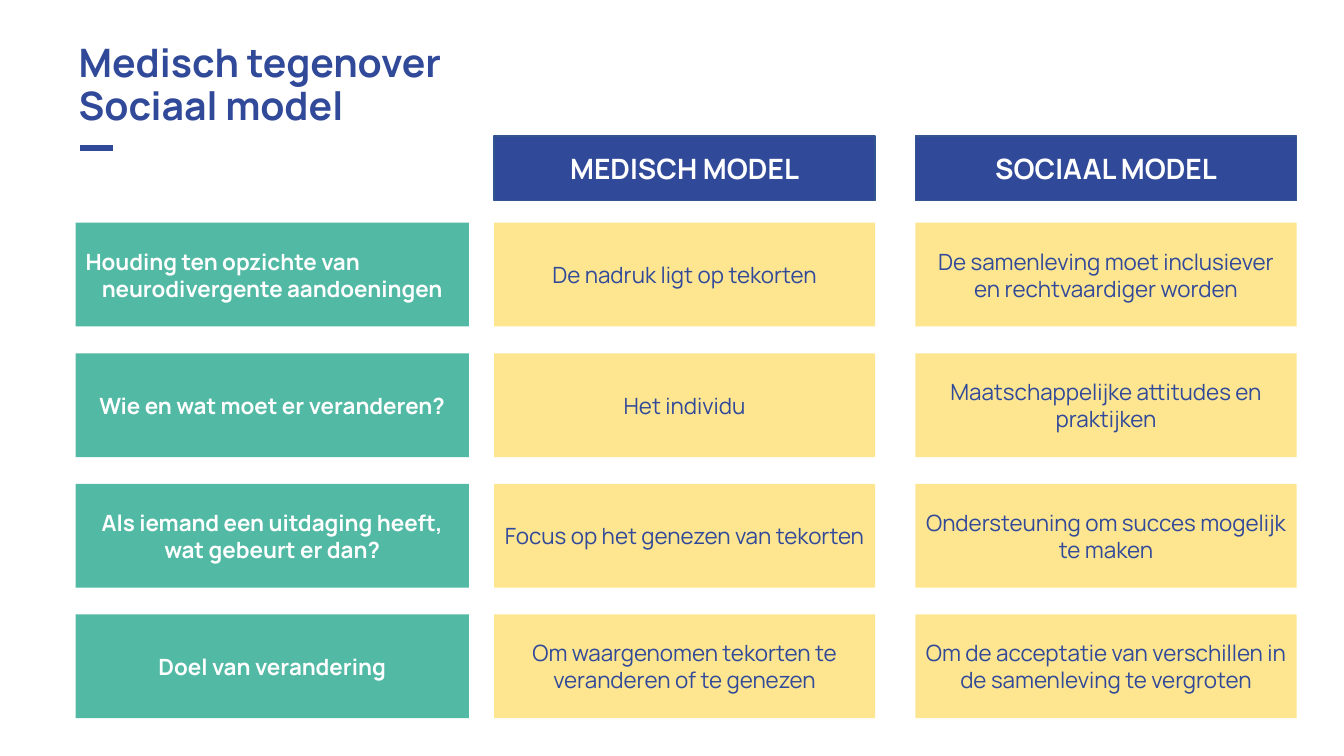
from lxml import etree
from pptx import Presentation
from pptx import util as u
from pptx.dml.color import RGBColor
from pptx.enum import shapes, text
from pptx.oxml.ns import qn

# Content
TITLE = "Medisch tegenover Sociaal model"
HEADS = ["MEDISCH MODEL", "SOCIAAL MODEL"]
ROWS = [
    ("Houding ten opzichte van\nneurodivergente aandoeningen",
     "De nadruk ligt op tekorten",
     "De samenleving moet inclusiever en rechtvaardiger worden"),
    ("Wie en wat moet er veranderen?",
     "Het individu",
     "Maatschappelijke attitudes en praktijken"),
    ("Als iemand een uitdaging heeft, wat gebeurt er dan?",
     "Focus op het genezen van tekorten",
     "Ondersteuning om succes mogelijk te maken"),
    ("Doel van verandering",
     "Om waargenomen tekorten te veranderen of te genezen",
     "Om de acceptatie van verschillen in de samenleving te vergroten"),
]

# Look
HEX = {"blue": "314999", "edge": "325491", "green": "51B9A4",
       "sand": "FEE691", "white": "FFFFFF"}
FACE = "Manrope"
HEAD = {"size": u.Pt(20), "bold": True, "tint": "white"}
SIDE = {"size": u.Pt(16), "bold": True, "tint": "white"}
CELL = {"size": u.Pt(16), "bold": False, "tint": "blue"}
MAIN = {"size": u.Pt(28), "bold": True, "tint": "blue"}

# Grid in inches: (left, width) of each column, then the rows
COLS = [(0.75, 3.9), (4.9, 3.78), (9.08, 3.78)]
TOP, STEP, HIGH = 2.21, 1.295, 1.03
HEAD_TOP, HEAD_HIGH = 1.35, 0.64

deck = Presentation()
deck.slide_width, deck.slide_height = u.Inches(13.33), u.Inches(7.5)
slide = deck.slides.add_slide(deck.slide_layouts[5])


def tint(name):
    return RGBColor.from_string(HEX[name])


def style(para, look):
    para.font.name = FACE
    para.font.color.rgb = tint(look["tint"])
    for key in ("size", "bold"):
        setattr(para.font, key, look[key])


def box(col, top, high, words, fill, look, edge=None):
    left, wide = COLS[col]
    rect = slide.shapes.add_shape(
        shapes.MSO_SHAPE.RECTANGLE,
        *(u.Inches(n) for n in (left, top, wide, high)))
    rect.shadow.inherit = False
    rect.fill.solid()
    rect.fill.fore_color.rgb = tint(fill)
    if edge:
        rect.line.color.rgb = tint(edge)
        rect.line.width = u.Pt(1)
    else:
        rect.line.fill.background()
    frame = rect.text_frame
    frame.word_wrap = True
    frame.vertical_anchor = text.MSO_ANCHOR.MIDDLE
    frame.text = words
    for para in frame.paragraphs:
        para.alignment = text.PP_ALIGN.CENTER
        style(para, look)
    return frame


# Title
title = slide.shapes.title
for key, val in {"left": 0.68, "top": 0.27, "width": 4.43, "height": 1.17}.items():
    setattr(title, key, u.Inches(val))
frame = title.text_frame
frame.text = TITLE
frame.word_wrap = True
frame.auto_size = text.MSO_AUTO_SIZE.NONE
frame.vertical_anchor = text.MSO_ANCHOR.MIDDLE
para = frame.paragraphs[0]
para.alignment = text.PP_ALIGN.LEFT
para.line_spacing = 0.9
style(para, MAIN)

# Short rule under the title
rule = slide.shapes.add_connector(
    shapes.MSO_CONNECTOR.STRAIGHT,
    *(u.Inches(n) for n in (0.79, 1.47, 1.12, 1.47)))
rule.line.color.rgb = tint("blue")
rule.line.width = u.Pt(4)
etree.SubElement(rule._element.spPr, qn("a:effectLst"))

# Column heads
for col, words in enumerate(HEADS, 1):
    box(col, HEAD_TOP, HEAD_HIGH, words, "blue", HEAD, "edge")

# Rows: question at the left, one answer per model
for row, line in enumerate(ROWS):
    for col, words in enumerate(line):
        fill, look = ("sand", CELL) if col else ("green", SIDE)
        frame = box(col, TOP + row * STEP, HIGH, words, fill, look)
        if "\n" in words:
            frame.paragraphs[0].alignment = text.PP_ALIGN.LEFT

deck.save("out.pptx")
